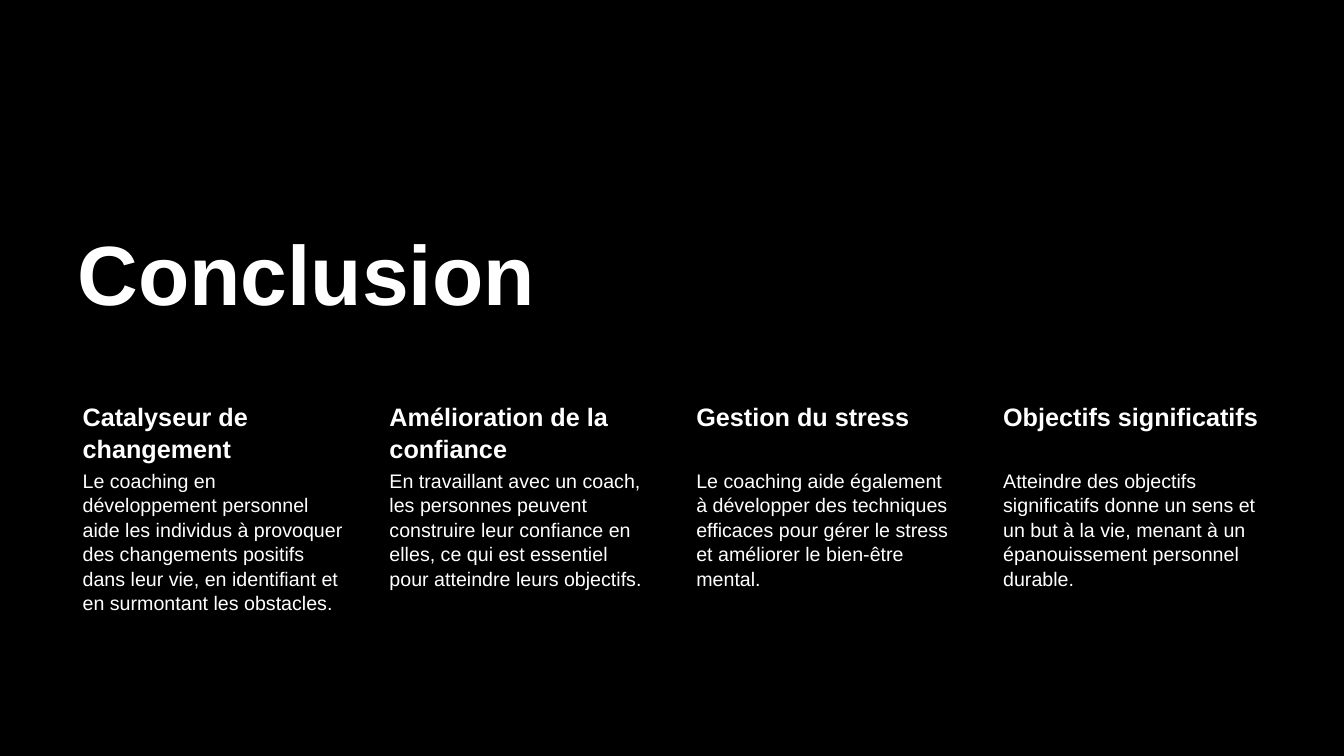
from pptx import Presentation
from pptx.dml.color import RGBColor
from pptx.enum.text import MSO_ANCHOR as Anchor, PP_ALIGN as Align
from pptx.util import Inches, Pt

BLACK = RGBColor(0x00, 0x00, 0x00)
WHITE = RGBColor(0xFF, 0xFF, 0xFF)

TITLE_FORMAT = {"size": Pt(60), "bold": True}
HEADING_FORMAT = {"size": Pt(18), "bold": True}
BODY_FORMAT = {"size": Pt(14), "bold": False}

LEFT, RIGHT = 0.67, 12.57
COLUMN_WIDTH = 2.77
COLUMN_TOP = 3.93
HEADING_HEIGHT, BODY_HEIGHT = 0.69, 2.05

COLUMNS = [
    ("Catalyseur de changement",
     "Le coaching en développement personnel aide les individus à provoquer "
     "des changements positifs dans leur vie, en identifiant et en surmontant "
     "les obstacles."),
    ("Amélioration de la confiance",
     "En travaillant avec un coach, les personnes peuvent construire leur "
     "confiance en elles, ce qui est essentiel pour atteindre leurs objectifs."),
    ("Gestion du stress",
     "Le coaching aide également à développer des techniques efficaces pour "
     "gérer le stress et améliorer le bien-être mental."),
    ("Objectifs significatifs",
     "Atteindre des objectifs significatifs donne un sens et un but à la vie, "
     "menant à un épanouissement personnel durable."),
]


def write_text(shape, text, font_format, line_spacing, anchor):
    frame = shape.text_frame
    frame.word_wrap = True
    frame.vertical_anchor = anchor
    paragraph = frame.paragraphs[0]
    paragraph.alignment = Align.LEFT
    paragraph.line_spacing = line_spacing
    run = paragraph.add_run()
    run.text = text
    run.font.name = "Arial"
    run.font.color.rgb = WHITE
    for name, value in font_format.items():
        setattr(run.font, name, value)


def place_title(slide, left, top, width, height):
    title = slide.shapes.title
    box = {"left": left, "top": top, "width": width, "height": height}
    for name, value in box.items():
        setattr(title, name, Inches(value))
    write_text(title, "Conclusion", TITLE_FORMAT, 0.9, Anchor.BOTTOM)


def add_column_text(group, box, inset, text, font_format, line_spacing):
    shape = group.shapes.add_textbox(*map(Inches, box))
    frame = shape.text_frame
    frame.margin_left = Inches(0.15)
    for side in ("top", "right", "bottom"):
        setattr(frame, f"margin_{side}", Inches(inset))
    write_text(shape, text, font_format, line_spacing, Anchor.TOP)


def add_column(group, left, top, width, heading, body):
    add_column_text(group, (left, top, width, HEADING_HEIGHT), 0.03,
                    heading, HEADING_FORMAT, 1.07)
    add_column_text(group, (left, top + HEADING_HEIGHT, width, BODY_HEIGHT), 0.02,
                    body, BODY_FORMAT, 1.04)


def add_columns(slide, left, right, top):
    """Spread the columns evenly from left to right."""
    group = slide.shapes.add_group_shape()
    step = (right - left - COLUMN_WIDTH) / (len(COLUMNS) - 1)
    for index, (heading, body) in enumerate(COLUMNS):
        add_column(group, left + index * step, top, COLUMN_WIDTH, heading, body)


def main():
    presentation = Presentation()
    presentation.slide_width = Inches(13.33)
    presentation.slide_height = Inches(7.5)
    slide = presentation.slides.add_slide(presentation.slide_layouts[5])
    background = slide.background.fill
    background.solid()
    background.fore_color.rgb = BLACK
    place_title(slide, LEFT, 2.02, 8.03, 1.24)
    add_columns(slide, LEFT, RIGHT, COLUMN_TOP)
    presentation.save("out.pptx")


if __name__ == "__main__":
    main()
